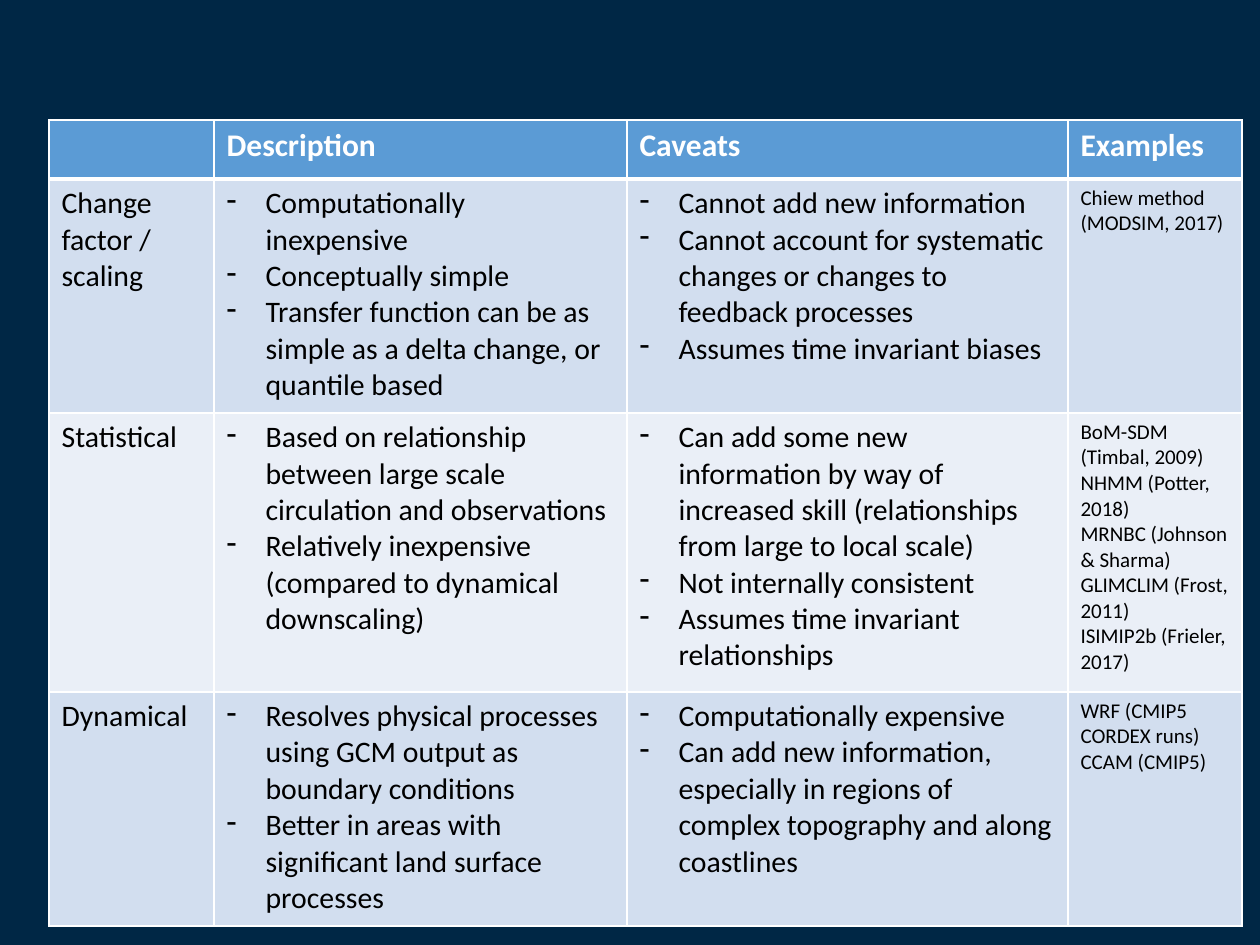
"""Build a slide with a table comparing three downscaling approaches."""
from lxml import etree
from pptx import Presentation
from pptx.dml.color import RGBColor
from pptx.oxml.ns import qn
from pptx.util import Pt

PX = 914400 / 126
FONT = "Calibri"
COLORS = {
    "background": "002745",
    "header": "5B9BD5",
    "odd": "D2DEEF",
    "even": "EAEFF7",
    "line": "FFFFFF",
    "text": "000000",
}
INDENT = 39
COLUMN_WIDTHS = [165, 413, 441, 174]
ROW_HEIGHTS = [59, 234, 279, 234]
HEADINGS = ["", "Description", "Caveats", "Examples"]
APPROACHES = [
    [
        ["Change factor / scaling"],
        [
            "Computationally inexpensive",
            "Conceptually simple",
            "Transfer function can be as simple as a delta change, or quantile based",
        ],
        [
            "Cannot add new information",
            "Cannot account for systematic changes or changes to feedback processes",
            "Assumes time invariant biases",
        ],
        ["Chiew method (MODSIM, 2017)"],
    ],
    [
        ["Statistical"],
        [
            "Based on relationship between large scale circulation and observations",
            "Relatively inexpensive (compared to dynamical downscaling)",
        ],
        [
            "Can add some new information by way of increased skill "
            "(relationships from large to local scale)",
            "Not internally consistent",
            "Assumes time invariant relationships",
        ],
        [
            "BoM-SDM (Timbal, 2009)",
            "NHMM (Potter, 2018)",
            "MRNBC (Johnson & Sharma)",
            "GLIMCLIM (Frost, 2011)",
            "ISIMIP2b (Frieler, 2017)",
        ],
    ],
    [
        ["Dynamical"],
        [
            "Resolves physical processes using GCM output as boundary conditions",
            "Better in areas with significant land surface processes",
        ],
        [
            "Computationally expensive",
            "Can add new information, especially in regions of complex "
            "topography and along coastlines",
        ],
        ["WRF (CMIP5 CORDEX runs)", "CCAM (CMIP5)"],
    ],
]


def px(length):
    return round(length * PX)


def fill_cell(cell, lines, *, fill, size, color="text", bold=False, dashed=False, top=1, bottom=1):
    properties = cell._tc.get_or_add_tcPr()
    for side, width in (("L", 1), ("R", 1), ("T", top), ("B", bottom)):
        border = etree.SubElement(properties, qn(f"a:ln{side}"), w=str(Pt(width)))
        solid = etree.SubElement(border, qn("a:solidFill"))
        etree.SubElement(solid, qn("a:srgbClr"), val=COLORS["line"])
    cell.fill.solid()
    cell.fill.fore_color.rgb = RGBColor.from_string(COLORS[fill])
    for index, line in enumerate(lines):
        para = cell.text_frame.add_paragraph() if index else cell.text_frame.paragraphs[0]
        if dashed:
            layout = para._p.get_or_add_pPr()
            layout.set("marL", str(px(INDENT)))
            layout.set("indent", str(-px(INDENT)))
            etree.SubElement(layout, qn("a:buFontTx"))
            etree.SubElement(layout, qn("a:buChar"), char="-")
        span = para.add_run()
        span.text = line
        span.font.name = FONT
        span.font.size = Pt(size)
        span.font.bold = bold
        span.font.color.rgb = RGBColor.from_string(COLORS[color])


deck = Presentation()
deck.slide_width, deck.slide_height = px(1260), px(945)
page = deck.slides.add_slide(deck.slide_layouts[6])
page.background.fill.solid()
page.background.fill.fore_color.rgb = RGBColor.from_string(COLORS["background"])

table = page.shapes.add_table(
    len(ROW_HEIGHTS), len(COLUMN_WIDTHS),
    px(49), px(120), px(sum(COLUMN_WIDTHS)), px(sum(ROW_HEIGHTS)),
).table
for column, width in zip(table.columns, COLUMN_WIDTHS):
    column.width = px(width)
for row, height in zip(table.rows, ROW_HEIGHTS):
    row.height = px(height)

for column, heading in enumerate(HEADINGS):
    lines = [heading] if heading else []
    fill_cell(table.cell(0, column), lines, fill="header", size=18, color="line", bold=True, bottom=3)

for row, approach in enumerate(APPROACHES, start=1):
    for column, lines in enumerate(approach):
        fill_cell(
            table.cell(row, column), lines,
            fill="odd" if row % 2 else "even",
            size=12 if column == 3 else 17,
            dashed=column in (1, 2),
            top=3 if row == 1 else 1,
        )

deck.save("out.pptx")
